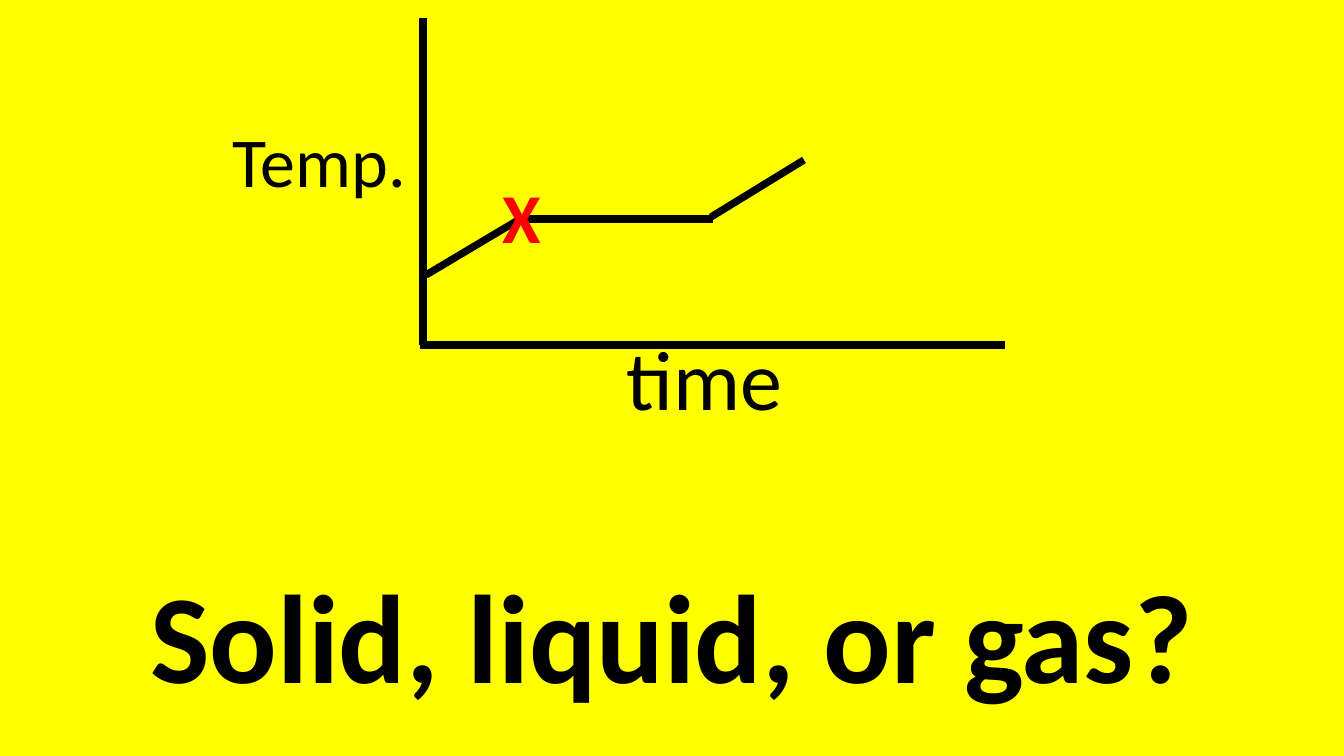
from lxml import etree
from pptx import Presentation
from pptx import util as u
from pptx.dml.color import RGBColor
from pptx.enum import shapes, text
from pptx.oxml.ns import qn

SCALE = u.Inches(1) / 100.8
FONT = "Calibri"
COLORS = {"background": "FFFF00", "ink": "000000", "marker": "FF0000"}


def px(length):
    return u.Emu(round(length * SCALE))


def color(name):
    return RGBColor.from_string(COLORS[name])


def add_text(page, words, left, top, width, height, *, size, ink="ink", bold=False,
             align=text.PP_ALIGN.LEFT, anchor=text.MSO_ANCHOR.TOP, spacing=1.0):
    box = page.shapes.add_textbox(px(left), px(top), px(width), px(height))
    frame = box.text_frame
    frame.word_wrap = True
    frame.vertical_anchor = anchor
    para = frame.paragraphs[0]
    para.alignment = align
    para.line_spacing = spacing
    span = para.add_run()
    span.text = words
    span.font.name = FONT
    span.font.size = u.Pt(size)
    span.font.bold = bold
    span.font.color.rgb = color(ink)


def add_line(page, start, end):
    line = page.shapes.add_connector(
        shapes.MSO_CONNECTOR.STRAIGHT, *map(px, start), *map(px, end))
    line.line.color.rgb = color("ink")
    line.line.width = u.Pt(5.25)
    etree.SubElement(line._element.spPr, qn("a:effectLst"))


def main():
    deck = Presentation()
    deck.slide_width, deck.slide_height = px(1344), px(756)
    page = deck.slides.add_slide(deck.slide_layouts[6])
    page.background.fill.solid()
    page.background.fill.fore_color.rgb = color("background")

    # Question
    add_text(page, "Solid, liquid, or gas?", 13, 430, 1318, 286, size=90, bold=True,
             align=text.PP_ALIGN.CENTER, anchor=text.MSO_ANCHOR.BOTTOM, spacing=0.9)

    # Axes and their labels
    add_line(page, (423, 18), (423, 345))
    add_line(page, (1005, 345), (420, 345))
    add_text(page, "Temp.", 223, 113, 369, 95, size=50)
    add_text(page, "time", 617, 322, 369, 112, size=60)

    # Heating curve: warming, change of state, warming
    add_line(page, (426, 275), (520, 219))
    add_line(page, (520, 219), (713, 219))
    add_line(page, (711, 217), (804, 160))

    # Marked point
    add_text(page, "X", 493, 169, 102, 95, size=50, ink="marker", bold=True)

    deck.save("out.pptx")


if __name__ == "__main__":
    main()
